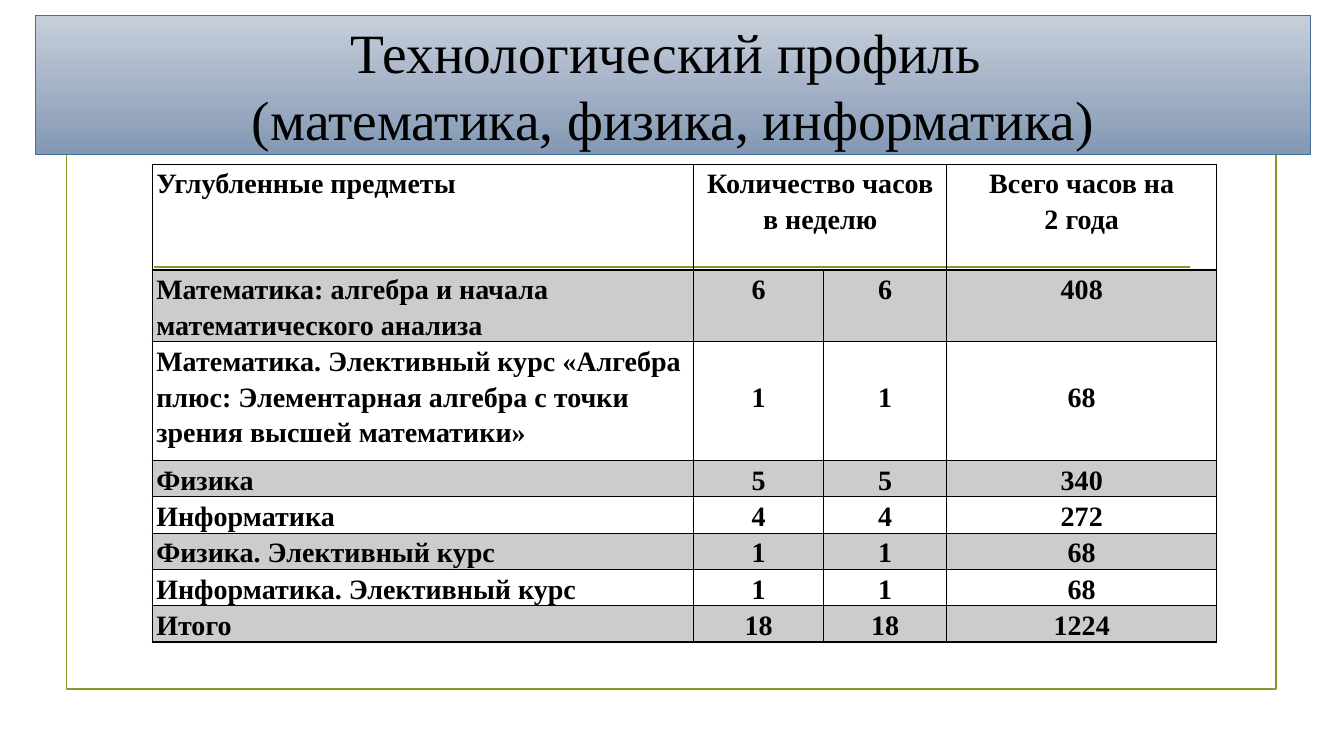
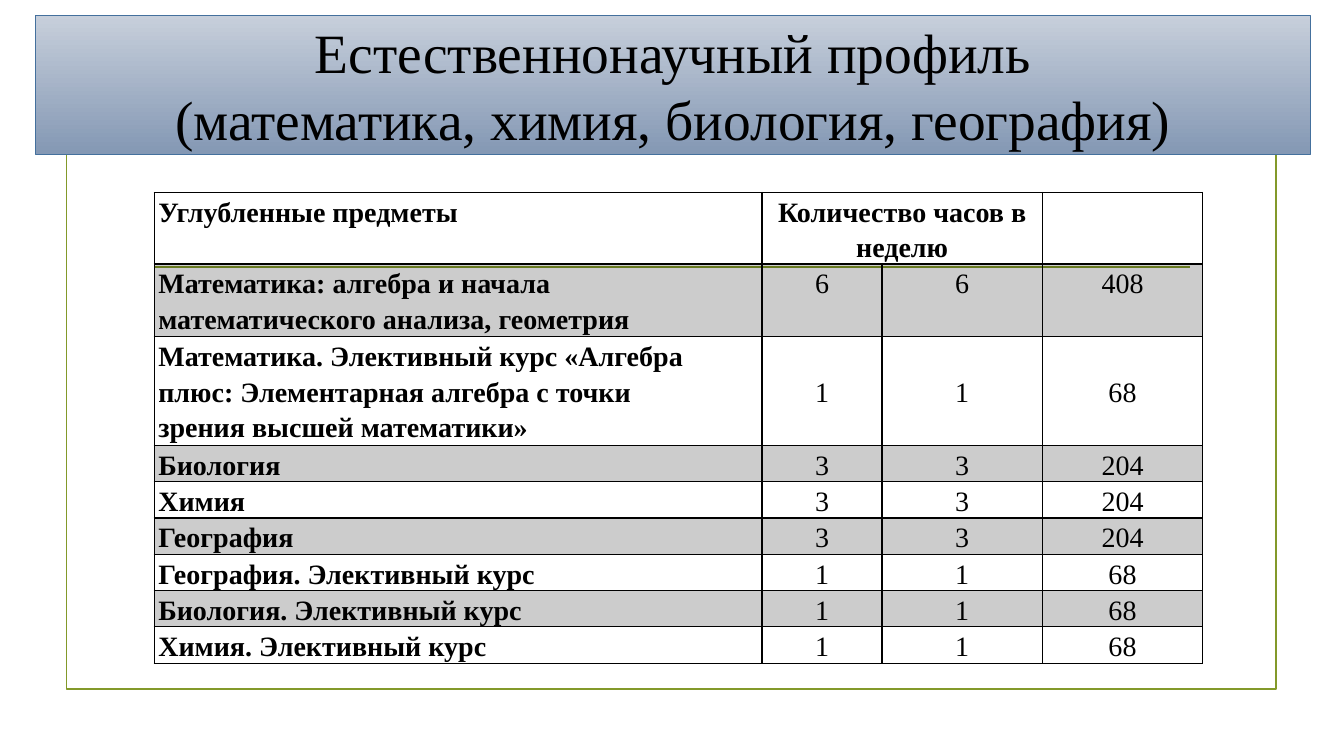
import pptx
import pptx.util
import pptx.dml.color
import pptx.enum.shapes
import pptx.enum.text
import pptx.oxml.ns
import lxml.etree

Color = pptx.dml.color.RGBColor
Align = pptx.enum.text.PP_ALIGN
Anchor = pptx.enum.text.MSO_ANCHOR

BLACK = Color(0x00, 0x00, 0x00)
OLIVE = Color(0x83, 0x99, 0x2A)
PALE = Color(0xC7, 0xCF, 0xDB)
STEEL = Color(0x84, 0x98, 0xB4)
EDGE = Color(0x44, 0x70, 0x9D)

FONT = "Times New Roman"
WIDE = pptx.util.Inches(13.33)
HIGH = pptx.util.Inches(7.5)
SHADE = 20  # opacity of a grey row, percent
PAD = pptx.util.Inches(0.04)
LINE = 4.8  # height of one table line, percent of the slide

HEAD = "Углубленные предметы"
HOURS = "Количество часов в неделю"
PLUS = ("Математика. Элективный курс «Алгебра\vплюс: Элементарная алгебра с точки"
        "\nзрения высшей математики»")

TECH = [
    [HEAD, HOURS, "", "Всего часов на\n2 года"],
    ["Математика: алгебра и начала математического анализа", "6", "6", "408"],
    [PLUS, "1", "1", "68"],
    ["Физика", "5", "5", "340"],
    ["Информатика", "4", "4", "272"],
    ["Физика. Элективный курс", "1", "1", "68"],
    ["Информатика. Элективный курс", "1", "1", "68"],
    ["Итого", "18", "18", "1224"],
]
NATURE = [
    [HEAD, HOURS, "", ""],
    ["Математика: алгебра и начала математического анализа, геометрия", "6", "6", "408"],
    [PLUS, "1", "1", "68"],
    ["Биология", "3", "3", "204"],
    ["Химия", "3", "3", "204"],
    ["География", "3", "3", "204"],
    ["География. Элективный курс", "1", "1", "68"],
    ["Биология. Элективный курс", "1", "1", "68"],
    ["Химия. Элективный курс", "1", "1", "68"],
]


def across(share):
    """Percent of the slide's width as a length."""
    return pptx.util.Emu(round(WIDE * share / 100))


def down(share):
    """Percent of the slide's height as a length."""
    return pptx.util.Emu(round(HIGH * share / 100))


def box(left, top, width, height):
    return across(left), down(top), across(width), down(height)


def add(parent, tag, **attrs):
    return lxml.etree.SubElement(parent, pptx.oxml.ns.qn(tag), attrs)


def write(frame, text, size=20, bold=False, align=Align.LEFT, space=None):
    """Fill a text frame: \\n starts a paragraph, \\v breaks a line."""
    frame.word_wrap = True
    frame.text = text
    for para in frame.paragraphs:
        para.alignment = align
        para.line_spacing = space
        for run in para.runs:
            run.font.name = FONT
            run.font.size = pptx.util.Pt(size)
            run.font.bold = bold
            run.font.color.rgb = BLACK


def stroke(line, color, width):
    line.color.rgb = color
    line.width = pptx.util.Pt(width)


def border(cell, **widths):
    """Rule the four sides of a cell, 1 pt unless a side is given."""
    props = cell._tc.get_or_add_tcPr()
    for side in "LRTB":
        width = pptx.util.Pt(widths.get(side, 1))
        rule = add(props, f"a:ln{side}", w=str(width))
        add(add(rule, "a:solidFill"), "a:srgbClr", val=str(BLACK))


def shade(cell, dark):
    if not dark:
        cell.fill.background()
        return
    cell.fill.solid()
    cell.fill.fore_color.rgb = BLACK
    for color in cell._tc.tcPr.xpath("a:solidFill/a:srgbClr"):
        add(color, "a:alpha", val=str(SHADE * 1000))


def backdrop(slide):
    """Draw the olive frame and rule behind the title."""
    frame = slide.shapes.add_shape(
        pptx.enum.shapes.MSO_SHAPE.RECTANGLE, *box(4.95, 8.93, 90, 82.27))
    frame.shadow.inherit = False
    frame.fill.background()
    stroke(frame.line, OLIVE, 1.25)
    rule = slide.shapes.add_connector(
        pptx.enum.shapes.MSO_CONNECTOR.STRAIGHT,
        across(11.48), down(35.33), across(88.57), down(35.33))
    stroke(rule.line, OLIVE, 1.25)
    add(rule.element.spPr, "a:effectLst")


def banner(slide, text):
    """Format the title as a gradient band in front of the backdrop."""
    title = slide.shapes.title
    title.left, title.top, title.width, title.height = box(2.63, 2, 94.88, 18.4)
    title.fill.gradient()
    title.fill.gradient_angle = 270
    for stop, color in zip(title.fill.gradient_stops, (PALE, STEEL)):
        stop.color.rgb = color
    stroke(title.line, EDGE, 0.75)
    write(title.text_frame, text, size=39.6, align=Align.CENTER)
    title.text_frame.vertical_anchor = Anchor.MIDDLE
    title.text_frame.auto_size = pptx.enum.text.MSO_AUTO_SIZE.NONE
    title.element.getparent().append(title.element)


def grid(slide, data, left, top, cols, rows, bold):
    """Add a table of hours; bold says whether the figures are bold."""
    rows = rows + [LINE] * (len(data) - len(rows))
    shape = slide.shapes.add_table(
        len(data), len(cols), *box(left, top, sum(cols), sum(rows)))
    table = shape.table
    table.first_row = table.horz_banding = False
    for col, width in zip(table.columns, cols):
        col.width = across(width)
    for row, height in zip(table.rows, rows):
        row.height = down(height)
    for i, texts in enumerate(data):
        for j, text in enumerate(texts):
            cell = table.cell(i, j)
            cell.margin_left = cell.margin_right = PAD
            cell.margin_bottom = 0
            low = text != PLUS and texts[0] == PLUS
            cell.margin_top = down(LINE) if low else 0
            write(cell.text_frame, text, bold=bold or i == 0 or j == 0,
                  align=Align.CENTER if j else Align.LEFT, space=1.15)
            border(cell, T=2 if i == 1 else 1, B=1 if i else 2)
            shade(cell, i % 2 == 1)
    table.cell(0, 1).merge(table.cell(0, 2))


def page(deck, title, data, **layout):
    slide = deck.slides.add_slide(deck.slide_layouts.get_by_name("Title Only"))
    backdrop(slide)
    banner(slide, title)
    grid(slide, data, **layout)


def main():
    deck = pptx.Presentation()
    deck.slide_width, deck.slide_height = WIDE, HIGH
    page(deck, "Технологический профиль \v(математика, физика, информатика)", TECH,
         left=11.33, top=21.73, cols=[40.28, 9.68, 9.15, 20.1],
         rows=[14, 9.47, 15.73], bold=True)
    page(deck, "Естественнонаучный профиль\v(математика, химия, биология, география)",
         NATURE, left=11.48, top=25.47, cols=[45.22, 8.93, 11.93, 11.93],
         rows=[9.47, 9.6, 14.4], bold=False)
    deck.save("out.pptx")


if __name__ == "__main__":
    main()
